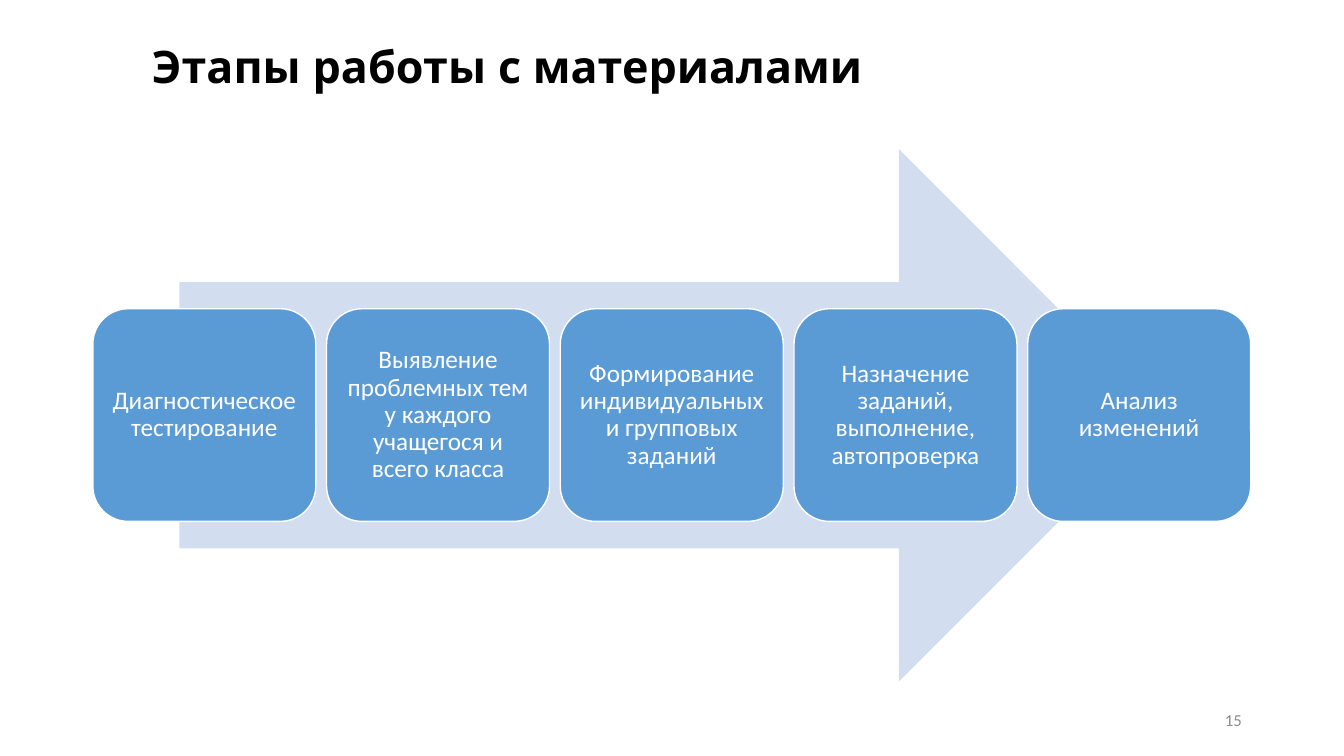
from pptx import Presentation
from pptx import util as u
from pptx.dml.color import RGBColor
from pptx.enum import shapes, text

HUES = {
    "black": "000000",
    "white": "FFFFFF",
    "gray": "8C8C8C",
    "pale": "D2DEEF",
    "blue": "5B9BD5",
}
STEPS = [
    "Диагностическое тестирование",
    "Выявление проблемных тем у каждого учащегося и всего класса",
    "Формирование индивидуальных и групповых заданий",
    "Назначение заданий, выполнение, автопроверка",
    "Анализ изменений",
]


def hue(name):
    return RGBColor.from_string(HUES[name])


def write(shape, words, face, size, color, align, bold=False):
    frame = shape.text_frame
    frame.word_wrap = True
    frame.vertical_anchor = text.MSO_ANCHOR.MIDDLE
    line = frame.paragraphs[0]
    line.text = words
    line.alignment = align
    line.line_spacing = 0.9
    line.font.name = face
    line.font.size = u.Pt(size)
    line.font.bold = bold
    line.font.color.rgb = hue(color)
    return frame


deck = Presentation()
deck.slide_width = u.Cm(33.87)
deck.slide_height = u.Cm(19.05)
slide = deck.slides.add_slide(deck.slide_layouts[6])

title = slide.shapes.add_textbox(u.Cm(3.58), u.Cm(0.43), u.Cm(27.97), u.Cm(2.62))
write(title, "Этапы работы с материалами", "League Spartan", 32, "black",
      text.PP_ALIGN.LEFT, True)

arrow = slide.shapes.add_shape(
    shapes.MSO_SHAPE.RIGHT_ARROW, u.Cm(4.52), u.Cm(3.76), u.Cm(24.84), u.Cm(13.41))
arrow.shadow.inherit = False
arrow.fill.solid()
arrow.fill.fore_color.rgb = hue("pale")
arrow.line.fill.background()

for i, step in enumerate(STEPS):
    box = slide.shapes.add_shape(
        shapes.MSO_SHAPE.ROUNDED_RECTANGLE,
        u.Cm(2.34 + 5.89 * i), u.Cm(7.78), u.Cm(5.62), u.Cm(5.36))
    box.shadow.inherit = False
    box.fill.solid()
    box.fill.fore_color.rgb = hue("blue")
    box.line.color.rgb = hue("white")
    box.line.width = u.Pt(1)
    frame = write(box, step, "Calibri", 18, "white", text.PP_ALIGN.CENTER)
    frame.margin_left = frame.margin_right = u.Cm(0.18)
    frame.margin_top = frame.margin_bottom = u.Cm(0.18)

page = slide.shapes.add_textbox(u.Cm(23.93), u.Cm(17.65), u.Cm(7.62), u.Cm(1.02))
write(page, "15", "Calibri", 12, "gray", text.PP_ALIGN.RIGHT)

deck.save("out.pptx")
